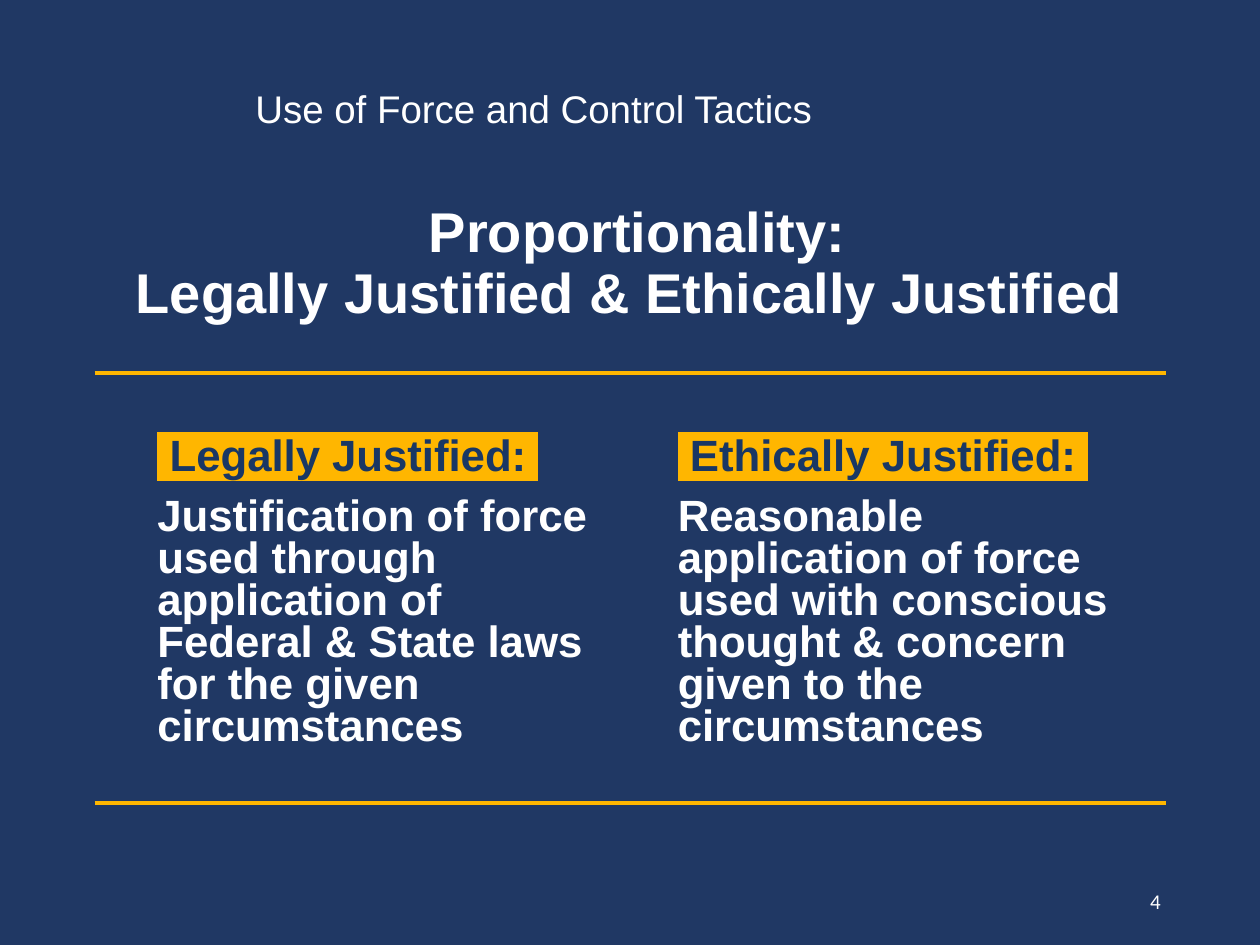
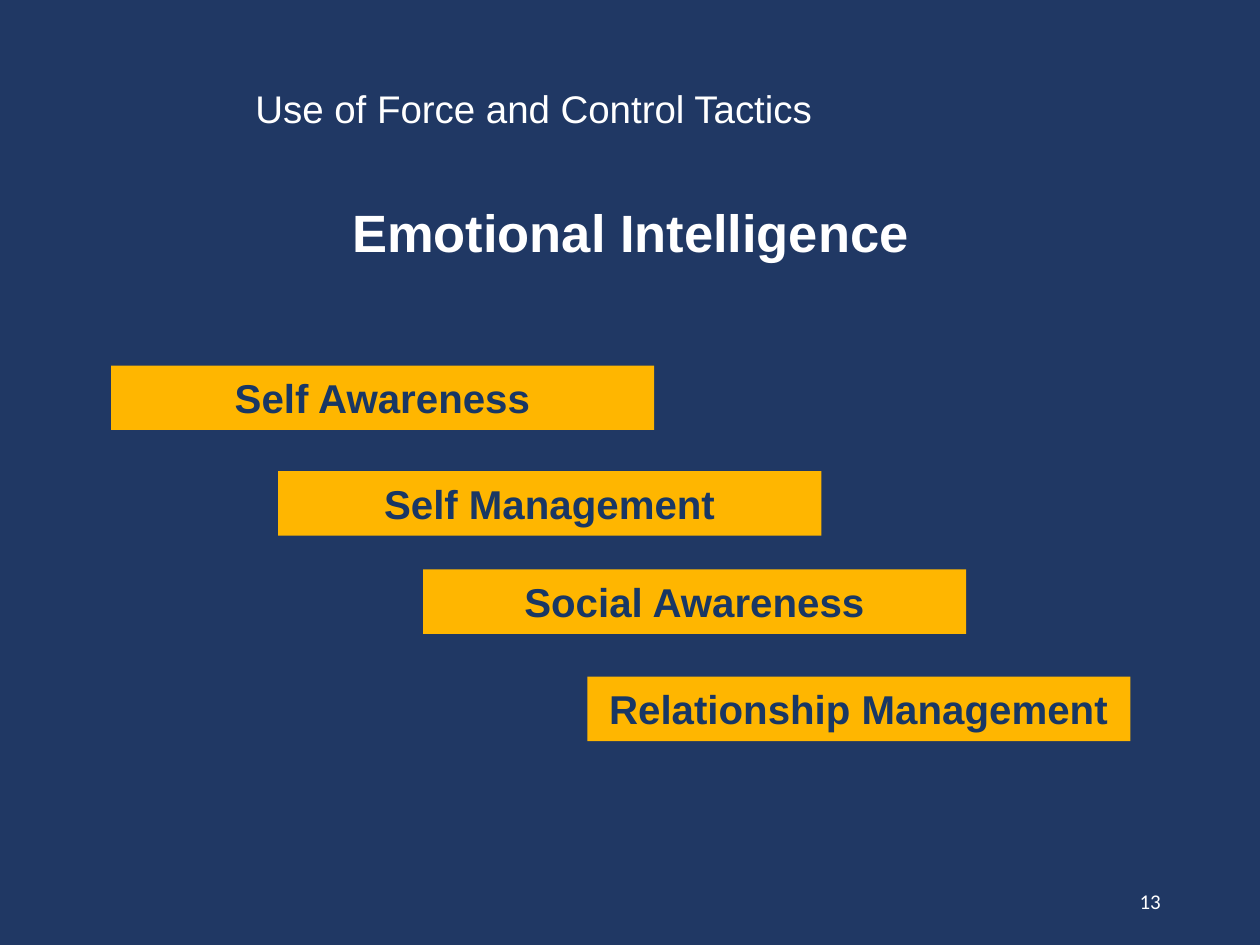
from pptx import Presentation
from pptx.dml.color import RGBColor
from pptx.enum.shapes import MSO_CONNECTOR as Connector, MSO_SHAPE as Shape
from pptx.enum.text import MSO_ANCHOR as Anchor, MSO_AUTO_SIZE as AutoSize, PP_ALIGN as Align
from pptx.oxml.ns import qn
from pptx.util import Cm, Pt
from lxml.etree import SubElement, Element

NAVY = RGBColor(0x20, 0x38, 0x64)
INK = RGBColor(0x19, 0x37, 0x64)
GOLD = RGBColor(0xFF, 0xB6, 0x00)
WHITE = RGBColor(0xFF, 0xFF, 0xFF)

COURSE = "Use of Force and Control Tactics"
TWO_CONTENT, TITLE_ONLY = 3, 5
COLUMN_LEFTS = (2.92, 13.41)
RULE_TOPS = (7.52, 16.18)
BAR_WIDTH, BAR_HEIGHT = 10.95, 1.3

JUSTIFICATIONS = [
    ("Legally Justified:",
     "Justification of force used through application of "
     "Federal & State laws for the given circumstances"),
    ("Ethically Justified:",
     "Reasonable application of force used with conscious "
     "thought & concern given to the circumstances"),
]
SKILLS = [
    ("Self Awareness", 2.24, 7.37),
    ("Self Management", 5.61, 9.5),
    ("Social Awareness", 8.53, 11.48),
    ("Relationship Management", 11.84, 13.64),
]


def place(shape, left, top, width, height):
    shape.left, shape.top = Cm(left), Cm(top)
    shape.width, shape.height = Cm(width), Cm(height)


def style_run(run, size, color, bold=False, face="Arial"):
    font = run.font
    font.size, font.bold, font.name = Pt(size), bold, face
    font.color.rgb = color


def style_paragraphs(frame, size, color, bold=False, face="Arial",
                     align=Align.LEFT, spacing=1.0):
    for paragraph in frame.paragraphs:
        paragraph.alignment = align
        paragraph.line_spacing = spacing
        paragraph.space_before = Pt(0)
        for run in paragraph.runs:
            style_run(run, size, color, bold, face)


def highlight(run, color):
    mark = Element(qn("a:highlight"))
    SubElement(mark, qn("a:srgbClr"), val=str(color))
    run.font.fill._xPr.find(qn("a:solidFill")).addnext(mark)


def remove_bullet(paragraph):
    properties = paragraph._p.get_or_add_pPr()
    properties.set("marL", "0")
    properties.set("indent", "0")
    SubElement(properties, qn("a:buNone"))


def add_label(slide, text, box, size, **style):
    label = slide.shapes.add_textbox(*map(Cm, box))
    frame = label.text_frame
    frame.word_wrap = True
    frame.vertical_anchor = Anchor.MIDDLE
    frame.text = text
    style_paragraphs(frame, size, WHITE, **style)


def add_topic_slide(deck, layout, title, title_box, title_size, number):
    slide = deck.slides.add_slide(deck.slide_layouts[layout])
    heading = slide.shapes.title
    place(heading, *title_box)
    frame = heading.text_frame
    frame.auto_size = AutoSize.NONE
    frame.vertical_anchor = Anchor.TOP
    frame.text = title
    style_paragraphs(frame, title_size, WHITE, bold=True,
                     align=Align.CENTER, spacing=0.9)
    add_label(slide, COURSE, (4.9, 1.63, 19.02, 1.22), 22, spacing=0.9)
    add_label(slide, number, (17.93, 17.65, 5.72, 1.02), 12,
              face="Calibri", align=Align.RIGHT)
    return slide


def fill_column(column, left, term, meaning):
    place(column, left, 8.71, 9.35, 6.55)
    frame = column.text_frame
    frame.auto_size = AutoSize.NONE
    frame.text = f" {term}\n{meaning}"
    for paragraph in frame.paragraphs:
        remove_bullet(paragraph)
    style_paragraphs(frame, 25, WHITE, bold=True, spacing=0.8)
    term_line, meaning_line = frame.paragraphs
    meaning_line.space_before = Pt(10)
    padding = term_line.add_run()
    padding.text = " "
    for run in term_line.runs:
        style_run(run, 25, INK, bold=True)
        highlight(run, GOLD)
    padding.font._element.set("spc", "700")


def add_rule(slide, top):
    rule = slide.shapes.add_connector(
        Connector.STRAIGHT, Cm(1.91), Cm(top), Cm(23.5), Cm(top))
    rule.line.color.rgb = GOLD
    rule.line.width = Pt(2.25)
    SubElement(rule._element.spPr, qn("a:effectLst"))


def add_skill_bar(slide, skill, left, top):
    bar = slide.shapes.add_shape(
        Shape.RECTANGLE, Cm(left), Cm(top), Cm(BAR_WIDTH), Cm(BAR_HEIGHT))
    bar.shadow.inherit = False
    bar.fill.solid()
    bar.fill.fore_color.rgb = GOLD
    bar.line.fill.background()
    bar.text_frame.text = skill
    style_paragraphs(bar.text_frame, 23, INK, bold=True, align=Align.CENTER)


def main():
    deck = Presentation()
    deck.slide_width, deck.slide_height = Cm(25.4), Cm(19.05)
    backdrop = deck.slide_master.background.fill
    backdrop.solid()
    backdrop.fore_color.rgb = NAVY

    proportionality = add_topic_slide(
        deck, TWO_CONTENT,
        "Proportionality:\nLegally Justified & Ethically Justified ",
        (0.15, 3.99, 25.4, 2.84), 32, "4")
    columns = list(proportionality.placeholders)[1:]
    for column, left, (term, meaning) in zip(columns, COLUMN_LEFTS, JUSTIFICATIONS):
        fill_column(column, left, term, meaning)
    for top in RULE_TOPS:
        add_rule(proportionality, top)

    intelligence = add_topic_slide(
        deck, TITLE_ONLY, "Emotional Intelligence",
        (0.56, 4.04, 24.31, 1.52), 30, "13")
    for skill, left, top in SKILLS:
        add_skill_bar(intelligence, skill, left, top)

    deck.save("out.pptx")


if __name__ == "__main__":
    main()
